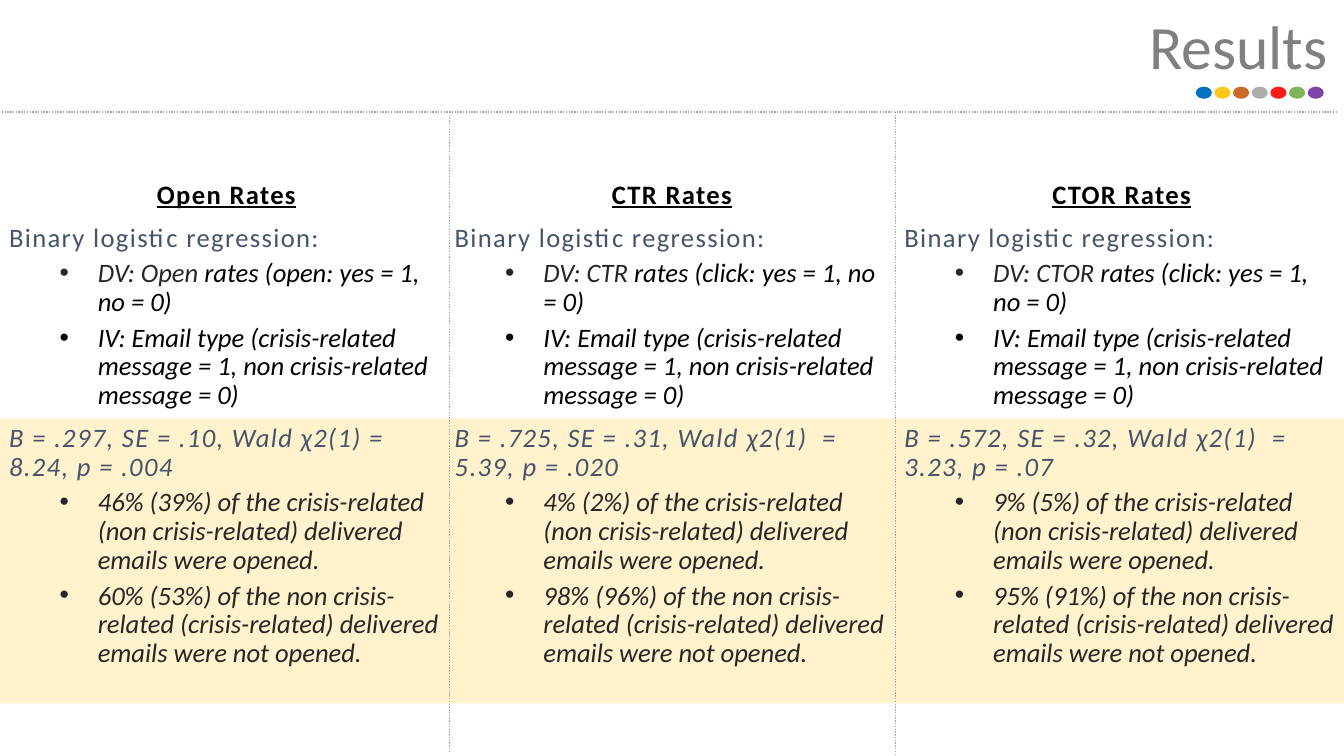
"""Build the Results slide: three columns of regression findings."""
from lxml.etree import SubElement
from pptx import Presentation
from pptx.dml.color import RGBColor
from pptx.enum.dml import MSO_LINE
from pptx.enum.shapes import MSO_CONNECTOR, MSO_SHAPE
from pptx.enum.text import MSO_ANCHOR, MSO_AUTO_SIZE, PP_ALIGN
from pptx.oxml.ns import qn
from pptx.util import Inches, Pt

COLORS = {
    "title": "808080", "heading": "000000", "slate": "44546A", "dark": "262626",
    "band": "FFF2CC", "rule": "A6A6A6",
}
DOTS = ["0070C0", "FFC000", "C55A11", "A5A5A5", "FF0000", "70AD47", "7030A0"]
COLUMNS = [
    (-0.01, "Open", "open", "B = .297, SE = .10, Wald χ2(1) = 8.24, p = .004",
     "46% (39%)", "60% (53%)"),
    (4.41, "CTR", "click", "B = .725, SE = .31, Wald χ2(1)  = 5.39, p = .020",
     "4% (2%)", "98% (96%)"),
    (8.87, "CTOR", "click", "B = .572, SE = .32, Wald χ2(1)  = 3.23, p = .07",
     "9% (5%)", "95% (91%)"),
]
RULES = [(-0.01, 1.11, 13.27, 1.11), (4.46, 1.11, 4.46, 7.46), (8.88, 1.11, 8.88, 7.5)]


def add_para(frame, first, bulleted, space_before):
    para = frame.paragraphs[0] if first else frame.add_paragraph()
    properties = para._p.get_or_add_pPr()
    properties.set("marL", str(Inches(0.88) if bulleted else 0))
    properties.set("indent", str(Inches(-0.38) if bulleted else 0))
    if bulleted:
        para.level = 1
        SubElement(properties, qn("a:buFont")).set("typeface", "Arial")
        SubElement(properties, qn("a:buChar")).set("char", "•")
    else:
        SubElement(properties, qn("a:buNone"))
    para.alignment = PP_ALIGN.LEFT
    para.line_spacing = 0.9
    para.space_before = Pt(space_before)
    para.space_after = Pt(0)
    return para


def add_span(para, text, color, size=19, spacing=0, bold=False, italic=False):
    span = para.add_run()
    span.text = text
    span.font.name = "Calibri"
    span.font.size = Pt(size)
    span.font.bold = bold
    span.font.italic = italic
    span.font.color.rgb = RGBColor.from_string(COLORS[color])
    span._r.get_or_add_rPr().set("spc", str(spacing))
    return span


deck = Presentation()
deck.slide_width = Inches(13.33)
deck.slide_height = Inches(7.5)
page = deck.slides.add_slide(deck.slide_layouts.get_by_name("Comparison"))

band = page.shapes.add_shape(
    MSO_SHAPE.RECTANGLE, Inches(0), Inches(4.15), Inches(13.33), Inches(2.83))
band.shadow.inherit = False
band.fill.solid()
band.fill.fore_color.rgb = RGBColor.from_string(COLORS["band"])
band.line.fill.background()
page.shapes.element.insert(2, band.element)

dots = page.shapes.add_group_shape()
for index, color in enumerate(DOTS):
    dot = dots.shapes.add_shape(
        MSO_SHAPE.OVAL, Inches(11.86 + 0.185 * index), Inches(0.86), Inches(0.16), Inches(0.12))
    dot.shadow.inherit = False
    dot.fill.solid()
    dot.fill.fore_color.rgb = RGBColor.from_string(color)
    dot.line.fill.background()
    if index > 0:
        fill_color = dot.element.spPr.find(qn("a:solidFill")).find(qn("a:srgbClr"))
        SubElement(fill_color, qn("a:alpha")).set("val", "90000")

title = page.shapes.title
title.left, title.top, title.width, title.height = (
    Inches(9.13), Inches(0.02), Inches(4.14), Inches(0.84))
title.text_frame.auto_size = MSO_AUTO_SIZE.NONE
title.text_frame.vertical_anchor = MSO_ANCHOR.MIDDLE
title_para = title.text_frame.paragraphs[0]
title_para.alignment = PP_ALIGN.RIGHT
add_span(title_para, "Results", "title", size=44)

bodies = [box for box in page.placeholders if box.placeholder_format.idx in (1, 2, 3)]
for box, (left, rate, action, statistics, opened, unopened) in zip(bodies, COLUMNS):
    box.left, box.top, box.width, box.height = (
        Inches(left), Inches(1.61), Inches(4.51), Inches(5.07))
    frame = box.text_frame
    frame.word_wrap = True
    frame.auto_size = MSO_AUTO_SIZE.NONE
    frame.vertical_anchor = MSO_ANCHOR.BOTTOM

    heading = add_para(frame, True, False, 0)
    heading.alignment = PP_ALIGN.CENTER
    add_span(heading, f"{rate} Rates", "heading", spacing=100, bold=True).font.underline = True

    method = add_para(frame, False, False, 10)
    add_span(method, "Binary logistic regression:", "slate", spacing=100)

    outcome = add_para(frame, False, True, 5)
    add_span(outcome, f"DV: {rate} ", "dark", italic=True)
    add_span(outcome, f"rates ({action}: yes = 1, no = 0)", "heading", italic=True)

    predictor = add_para(frame, False, True, 5)
    add_span(
        predictor,
        "IV: Email type (crisis-related message = 1, non crisis-related message = 0)",
        "heading", italic=True)

    result = add_para(frame, False, False, 10)
    add_span(result, statistics, "slate", spacing=100, italic=True)

    for finding in (
        f"{opened} of the crisis-related (non crisis-related) delivered emails were opened.",
        f"{unopened} of the non crisis-related (crisis-related) delivered emails were not opened.",
    ):
        add_span(add_para(frame, False, True, 5), finding, "dark", italic=True)

for box in list(page.placeholders):
    if box.placeholder_format.idx not in (0, 1, 2, 3):
        box.element.getparent().remove(box.element)

for start_x, start_y, end_x, end_y in RULES:
    rule = page.shapes.add_connector(
        MSO_CONNECTOR.STRAIGHT, Inches(start_x), Inches(start_y), Inches(end_x), Inches(end_y))
    rule.line.color.rgb = RGBColor.from_string(COLORS["rule"])
    rule.line.width = Pt(1)
    rule.line.dash_style = MSO_LINE.ROUND_DOT
    SubElement(rule.element.spPr, qn("a:effectLst"))

deck.save("out.pptx")
